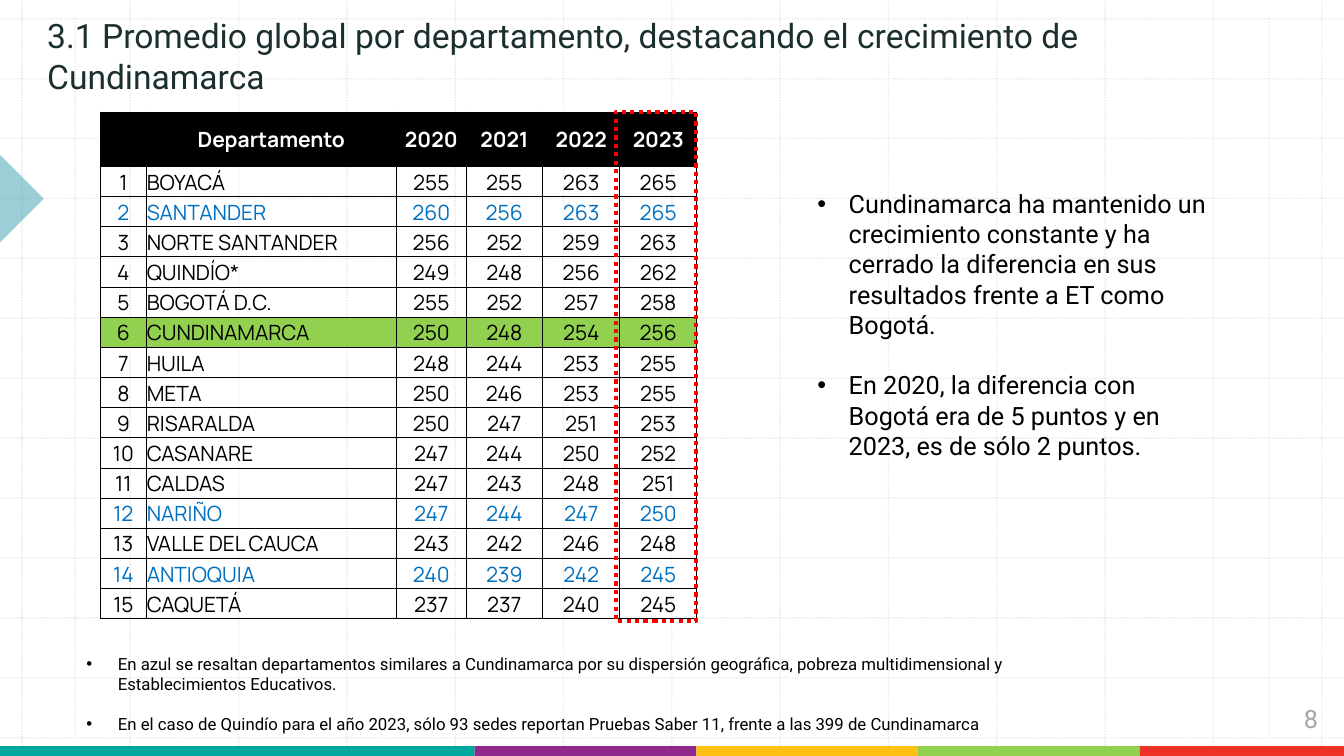
from lxml.etree import SubElement
from pptx import Presentation
from pptx.dml.color import RGBColor
from pptx.enum.dml import MSO_LINE
from pptx.enum.shapes import MSO_CONNECTOR, MSO_SHAPE
from pptx.enum.text import MSO_ANCHOR as ANCHOR, PP_ALIGN as ALIGN
from pptx.oxml import parse_xml
from pptx.oxml.ns import nsdecls, qn
from pptx.util import Cm, Pt

BLACK = RGBColor(0x00, 0x00, 0x00)
WHITE = RGBColor(0xFF, 0xFF, 0xFF)
GRID = RGBColor(0xBC, 0xBC, 0xBC)
LAGOON = RGBColor(0x3B, 0x9E, 0xB1)
TEAL = RGBColor(0x00, 0xA7, 0x9C)
PURPLE = RGBColor(0x90, 0x29, 0x8D)
YELLOW = RGBColor(0xFE, 0xC1, 0x13)
GREEN = RGBColor(0x92, 0xD0, 0x50)
RED = RGBColor(0xED, 0x33, 0x26)
BLUE = RGBColor(0x00, 0x70, 0xC0)
TITLE = RGBColor(0x1B, 0x2F, 0x2E)
GREY = RGBColor(0xA6, 0xA6, 0xA6)
FRAME = RGBColor(0xFF, 0x00, 0x00)


def write(tf, *texts, font="Roboto", size=18, color=BLACK, bold=False,
          align=ALIGN.LEFT, bullet=False, gap=0):
    for i, text in enumerate(texts):
        p = tf.add_paragraph() if i else tf.paragraphs[0]
        p.alignment = align
        if bullet:
            pPr = p._p.get_or_add_pPr()
            pPr.set("marL", str(Cm(0.79)))
            pPr.set("indent", str(-Cm(0.79)))
            SubElement(pPr, qn("a:buFont")).set("typeface", "Arial")
            SubElement(pPr, qn("a:buChar")).set("char", "•")
        if i:
            p.space_before = Pt(gap)
        r = p.add_run()
        r.text = text
        r.font.name = font
        r.font.size = Pt(size)
        r.font.bold = bold
        r.font.color.rgb = color


def set_alpha(s, percent):
    color = s._element.spPr.find(".//" + qn("a:srgbClr"))
    SubElement(color, qn("a:alpha")).set("val", str(percent * 1000))


prs = Presentation()
prs.slide_width, prs.slide_height = Cm(33.87), Cm(19.05)
sp = prs.slides.add_slide(prs.slide_layouts[6]).shapes

grid = [(0.55 + 2.73 * i, 0, 0.55 + 2.73 * i, 19.05) for i in range(13)]
grid += [(0, 0.47 + 1.51 * i, 33.87, 0.47 + 1.51 * i) for i in range(13)]
grid += [(x, 0.47, x, 18.57) for x in (1.9, 31.98)]
for ends in grid:
    s = sp.add_connector(MSO_CONNECTOR.STRAIGHT, *[Cm(v) for v in ends])
    s.line.color.rgb = GRID
    s.line.width = Pt(1)
    s.line.dash_style = MSO_LINE.ROUND_DOT
    set_alpha(s, 30)
    SubElement(s._element.spPr, qn("a:effectLst"))

s = sp.add_shape(MSO_SHAPE.RIGHT_TRIANGLE, Cm(-0.79), Cm(4.22), Cm(1.57), Cm(1.57))
s.rotation = 225
s.shadow.inherit = False
s.fill.solid()
s.fill.fore_color.rgb = LAGOON
set_alpha(s, 50)
s.line.fill.background()

x = 0
for width, color in [(11.96, TEAL), (5.59, PURPLE), (5.59, YELLOW),
                     (5.59, GREEN), (5.14, RED)]:
    s = sp.add_shape(MSO_SHAPE.RECTANGLE, Cm(x), Cm(18.8), Cm(width), Cm(0.3))
    s.shadow.inherit = False
    s.fill.solid()
    s.fill.fore_color.rgb = color
    s.line.fill.background()
    x += width

rows = [
    ("", "Departamento", 2020, 2021, 2022, 2023),
    (1, "BOYACÁ", 255, 255, 263, 265),
    (2, "SANTANDER", 260, 256, 263, 265),
    (3, "NORTE SANTANDER", 256, 252, 259, 263),
    (4, "QUINDÍO*", 249, 248, 256, 262),
    (5, "BOGOTÁ D.C.", 255, 252, 257, 258),
    (6, "CUNDINAMARCA", 250, 248, 254, 256),
    (7, "HUILA", 248, 244, 253, 255),
    (8, "META", 250, 246, 253, 255),
    (9, "RISARALDA", 250, 247, 251, 253),
    (10, "CASANARE", 247, 244, 250, 252),
    (11, "CALDAS", 247, 243, 248, 251),
    (12, "NARIÑO", 247, 244, 247, 250),
    (13, "VALLE DEL CAUCA", 243, 242, 246, 248),
    (14, "ANTIOQUIA", 240, 239, 242, 245),
    (15, "CAQUETÁ", 237, 237, 240, 245),
]
similar = ("SANTANDER", "NARIÑO", "ANTIOQUIA")
fills = {"Departamento": BLACK, "CUNDINAMARCA": GREEN}
table = sp.add_table(len(rows), 6, Cm(2.54), Cm(2.82), Cm(15.02), Cm(12.77)).table
table.first_row = table.horz_banding = False
for col, width in zip(table.columns, (1.14, 6.32, 1.74, 1.94, 1.94, 1.94)):
    col.width = Cm(width)
for i, row in enumerate(rows):
    table.rows[i].height = Cm(0.76 if i else 1.37)
    name = row[1]
    color = WHITE if i == 0 else BLUE if name in similar else BLACK
    for j, value in enumerate(row):
        cell = table.cell(i, j)
        cell.margin_left = cell.margin_right = cell.margin_top = Cm(0.02)
        cell.margin_bottom = 0
        cell.vertical_anchor = ANCHOR.BOTTOM if i else ANCHOR.MIDDLE
        if name in fills:
            cell.fill.solid()
            cell.fill.fore_color.rgb = fills[name]
        else:
            cell.fill.background()
        write(cell.text_frame, str(value), font="Manrope", size=15, color=color,
              bold=i == 0, align=ALIGN.LEFT if i and j == 1 else ALIGN.CENTER)
        tcPr = cell._tc.get_or_add_tcPr()
        for k, side in enumerate("LRTB"):
            tcPr.insert(k, parse_xml(
                f'<a:ln{side} {nsdecls("a")} w="{Pt(0.5)}"><a:solidFill>'
                f'<a:srgbClr val="{BLACK}"/></a:solidFill></a:ln{side}>'))

boxes = [
    ((0.94, 1.12, 29.16, 1.42), ANCHOR.BOTTOM,
     ["3.1 Promedio global por departamento, destacando el crecimiento de Cundinamarca"],
     dict(size=24, color=TITLE)),
    ((20.35, 4.62, 10.64, 7.19), ANCHOR.TOP,
     ["Cundinamarca ha mantenido un crecimiento constante y ha cerrado la "
      "diferencia en sus resultados frente a ET como Bogotá.",
      "En 2020, la diferencia con Bogotá era de 5 puntos y en 2023, es de sólo 2 puntos."],
     dict(bullet=True, gap=21.6)),
    ((1.93, 15.8, 24, 2.82), ANCHOR.BOTTOM,
     ["En azul se resaltan departamentos similares a Cundinamarca por su dispersión "
      "geográfica, pobreza multidimensional y Establecimientos Educativos.",
      "En el caso de Quindío para el año 2023, sólo 93 sedes reportan Pruebas "
      "Saber 11, frente a las 399 de Cundinamarca"],
     dict(size=12, bullet=True, gap=14.3)),
    ((32.61, 17.6, 1.24, 1.02), ANCHOR.TOP, ["8"], dict(color=GREY)),
]
for place, anchor, texts, fmt in boxes:
    tf = sp.add_textbox(*[Cm(v) for v in place]).text_frame
    tf.word_wrap = True
    tf.vertical_anchor = anchor
    write(tf, *texts, **fmt)

s = sp.add_shape(MSO_SHAPE.RECTANGLE, Cm(15.52), Cm(2.82), Cm(2.03), Cm(12.83))
s.shadow.inherit = False
s.fill.background()
s.line.color.rgb = FRAME
s.line.width = Pt(3)
s.line.dash_style = MSO_LINE.ROUND_DOT

prs.save("out.pptx")
